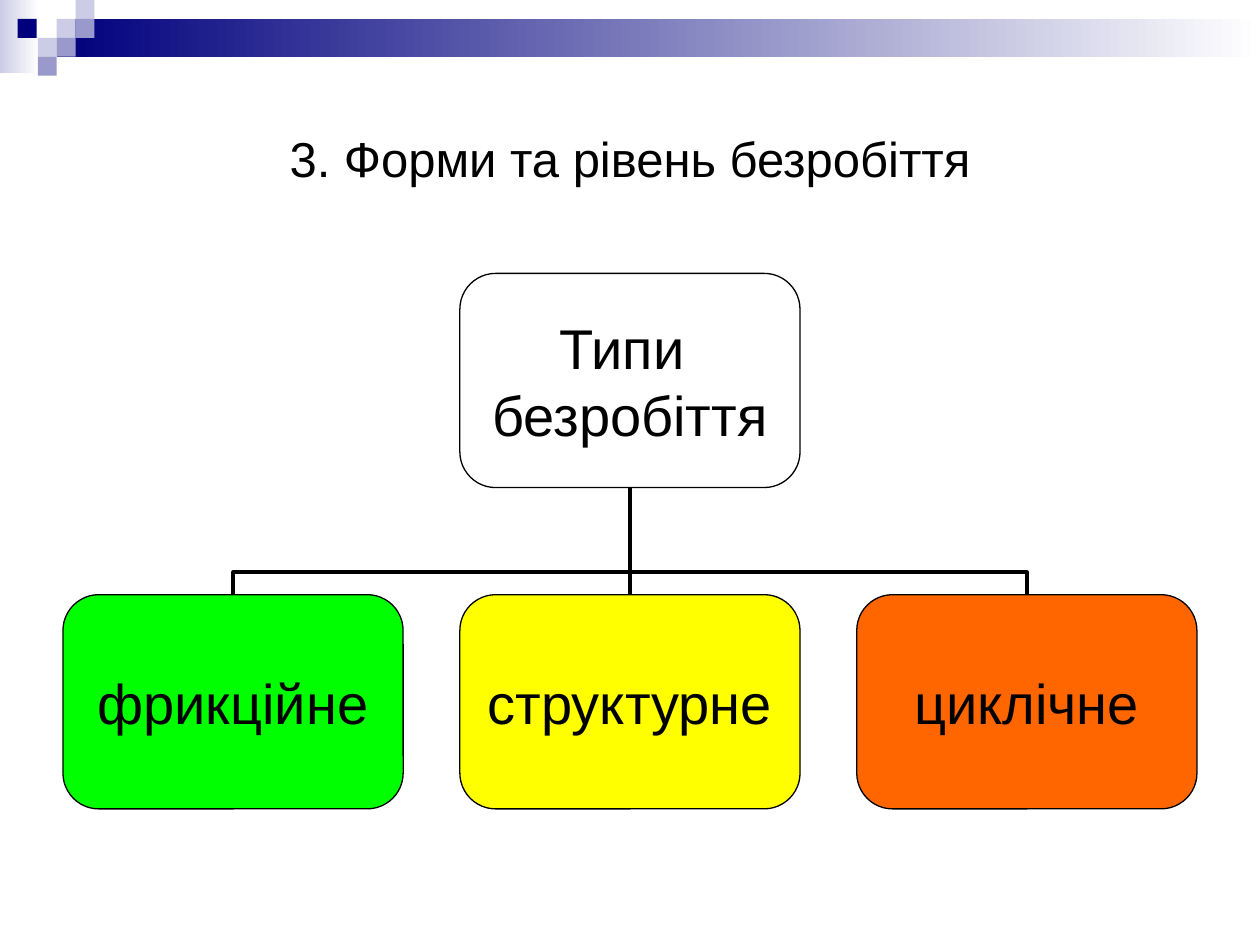
from lxml import etree
from pptx import Presentation
from pptx.dml.color import RGBColor
from pptx.enum import shapes as sh, text as tx
from pptx.oxml.ns import qn
from pptx.util import Inches, Pt

BLACK, WHITE, NAVY = "000000", "FFFFFF", "00007D"
PALE, MID = "CCCCE6", "9999CC"
TYPES = [("фрикційне", "00FF00"), ("структурне", "FFFF00"), ("циклічне", "FF6600")]


def paint(color, value):
    color.rgb = RGBColor.from_string(value)


def add_box(slide, kind, x, y, w, h, fill, end=None):
    """Plain shape; a second colour makes a left-to-right gradient."""
    box = slide.shapes.add_shape(kind, Inches(x), Inches(y), Inches(w), Inches(h))
    box.shadow.inherit = False
    box.line.fill.background()
    if end:
        box.fill.gradient()
        box.fill.gradient_angle = 0
        for stop, value in zip(box.fill.gradient_stops, (fill, end)):
            paint(stop.color, value)
    else:
        box.fill.solid()
        paint(box.fill.fore_color, fill)
    return box


def write(frame, words, size):
    frame.text = words
    frame.vertical_anchor = tx.MSO_ANCHOR.MIDDLE
    for para in frame.paragraphs:
        para.alignment = tx.PP_ALIGN.CENTER
        for run in para.runs:
            run.font.size, run.font.name = Pt(size), "Arial"
            paint(run.font.color, BLACK)


def add_banner(slide, x, y, w):
    rect, step = sh.MSO_SHAPE.RECTANGLE, 0.15
    add_box(slide, rect, x, y, 0.31, 0.58, PALE, WHITE)
    add_box(slide, rect, x + 0.45, y + step, w - 0.45, 2 * step, NAVY, WHITE)
    add_box(slide, rect, x + 0.14, y + step, step, step, NAVY)
    # Checker squares: column, row, colour
    for col, row, fill in [(3, 1, PALE), (4, 0, PALE), (4, 1, MID),
                           (2, 2, PALE), (3, 2, MID), (2, 3, MID)]:
        add_box(slide, rect, x + col * step, y + row * step, step, step, fill)


def add_title(slide, x, y, w, h):
    box = slide.shapes.add_textbox(Inches(x), Inches(y), Inches(w), Inches(h))
    box.text_frame.word_wrap = True
    write(box.text_frame, "3. Форми та рівень безробіття", 28)


def add_node(slide, x, y, w, h, words, fill):
    node = add_box(slide, sh.MSO_SHAPE.ROUNDED_RECTANGLE, x, y, w, h, fill)
    node.adjustments[0] = 0.167
    paint(node.line.color, BLACK)
    node.line.width = Pt(0.75)
    frame = node.text_frame
    frame.margin_left = frame.margin_right = 0
    frame.margin_top = frame.margin_bottom = 0
    frame.word_wrap = False
    write(frame, words, 32)


def add_link(slide, x, y, to_x, to_y):
    """Link from a child's top up to the parent's bottom."""
    kind, turn = sh.MSO_CONNECTOR.STRAIGHT, 0
    ends = (x, y, to_x, to_y)
    if x != to_x:
        # An elbow that starts vertically is a horizontal one turned a quarter
        kind, turn = sh.MSO_CONNECTOR.ELBOW, 90 if x > to_x else 270
        side = 1 if x > to_x else -1
        mid_x, mid_y = (x + to_x) / 2, (y + to_y) / 2
        half_w, half_h = side * (y - to_y) / 2, abs(x - to_x) / 2
        ends = (mid_x + half_w, mid_y - half_h, mid_x - half_w, mid_y + half_h)
    link = slide.shapes.add_connector(kind, *map(Inches, ends))
    paint(link.line.color, BLACK)
    link.line.width = Pt(2.25)
    props = link._element.spPr
    etree.SubElement(props, qn("a:effectLst"))
    if turn:
        props.find(qn("a:xfrm")).set("rot", str(turn * 60000))
        guides = props.find(qn("a:prstGeom")).find(qn("a:avLst"))
        etree.SubElement(guides, qn("a:gd"), name="adj1", fmla="val 20800")


def add_tree(slide, x, y, w, h):
    node_w, node_h = 2.7, 1.7
    pitch = (w - node_w) / (len(TYPES) - 1)
    mid, low = x + w / 2, y + h - node_h
    lefts = [x + i * pitch for i in range(len(TYPES))]
    # Links lie behind the nodes
    for left in reversed(lefts):
        add_link(slide, round(left + node_w / 2, 2), low, round(mid, 2), y + node_h)
    add_node(slide, mid - node_w / 2, y, node_w, node_h, "Типи \nбезробіття", WHITE)
    for left, (words, fill) in zip(lefts, TYPES):
        add_node(slide, left, low, node_w, node_h, words, fill)


def main():
    deck = Presentation()
    deck.slide_width, deck.slide_height = Inches(10), Inches(7.5)
    slide = deck.slides.add_slide(deck.slide_layouts[6])
    add_banner(slide, 0, 0, 10)
    add_title(slide, 0.5, 0.5, 9, 1.5)
    add_tree(slide, 0.5, 2.17, 9, 4.25)
    deck.save("out.pptx")


if __name__ == "__main__":
    main()
